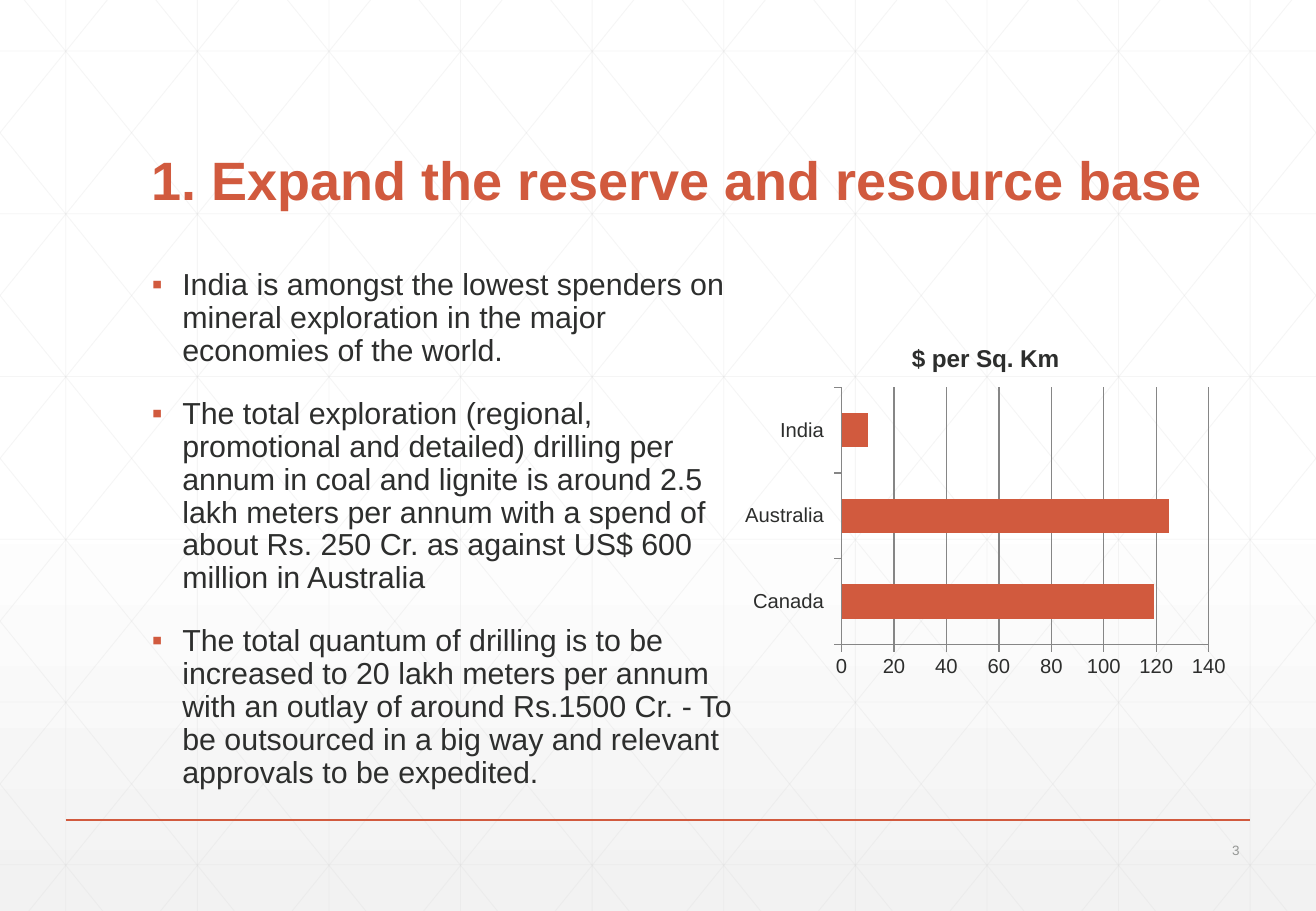
from lxml import etree
from pptx import Presentation
from pptx.chart.data import CategoryChartData
from pptx.dml.color import RGBColor
from pptx.enum.chart import XL_CHART_TYPE as ChartType, XL_TICK_MARK as TickMark
from pptx.enum.shapes import MSO_CONNECTOR as Connector
from pptx.enum.text import MSO_ANCHOR as Anchor, MSO_AUTO_SIZE as AutoSize, PP_ALIGN as Align
from pptx.oxml.ns import qn
from pptx.util import Pt

PX = 9144  # one hundredth of an inch
WIDTH, HEIGHT = 1083, 750
FONT = "Arial"
ACCENT, INK, MUTED = "D15A3E", "2D2E2D", "959795"
LATTICE, AXIS, PAPER, SHADE = "D9D9D9", "868686", "FFFFFF", "F2F2F2"

HEADING = "1. Expand the reserve and resource base"
POINTS = [
    "India is amongst the lowest spenders on mineral exploration in the major "
    "economies of the world.",
    "The total exploration (regional, promotional and detailed) drilling per annum "
    "in coal and lignite is around 2.5 lakh meters per annum with a spend of about "
    "Rs. 250 Cr. as against US$ 600 million in Australia",
    "The total quantum of drilling is to be increased to 20 lakh meters per annum "
    "with an outlay of around Rs.1500 Cr. - To be outsourced in a big way and "
    "relevant approvals to be expedited.",
]
SPENDING = {"Canada ": 119, "Australia ": 125, "India ": 10}


def px(length):
    return round(length * PX)


def colour(code):
    return RGBColor.from_string(code)


def place(shape, box):
    shape.left, shape.top, shape.width, shape.height = map(px, box)


def style_font(font, size, code, bold=False):
    font.name, font.size, font.bold = FONT, Pt(size), bold
    font.color.rgb = colour(code)


def add_bullet(paragraph, indent, mark="▪"):
    props = paragraph._p.get_or_add_pPr()
    props.set("marL", str(px(indent)))
    props.set("indent", str(px(-indent)))
    bullet_colour = etree.SubElement(props, qn("a:buClr"))
    etree.SubElement(bullet_colour, qn("a:srgbClr"), val=ACCENT)
    etree.SubElement(props, qn("a:buFont"), typeface=FONT)
    etree.SubElement(props, qn("a:buChar"), char=mark)


def write(shape, texts, size, code, bold=False, align=Align.LEFT, anchor=Anchor.TOP,
          spacing=1.0, before=0, indent=0):
    frame = shape.text_frame
    frame.text = "\n".join(texts)
    frame.word_wrap, frame.auto_size = True, AutoSize.NONE
    frame.vertical_anchor = anchor
    for paragraph in frame.paragraphs:
        paragraph.alignment, paragraph.line_spacing = align, spacing
        paragraph.space_before, paragraph.space_after = Pt(before), Pt(0)
        if indent:
            add_bullet(paragraph, indent)
        style_font(paragraph.runs[0].font, size, code, bold)


def draw_line(shapes, start, end, code, weight, opacity=100):
    line = shapes.add_connector(Connector.STRAIGHT, *map(px, (*start, *end)))
    line.line.color.rgb, line.line.width = colour(code), Pt(weight)
    properties = line.element.spPr
    if opacity < 100:
        shade = next(properties.iter(qn("a:srgbClr")))
        etree.SubElement(shade, qn("a:alpha"), val=str(opacity * 1000))
    etree.SubElement(properties, qn("a:effectLst"))


def add_backdrop(slide, width, height):
    fill = slide.background.fill
    fill.gradient()
    fill.gradient_angle = 270
    for stop, position, code in zip(fill.gradient_stops, (0.53, 1), (PAPER, SHADE)):
        stop.position, stop.color.rgb = position, colour(code)

    # Lattice: uprights, levels and two mirrored sets of diagonals
    step, lean = width / 10, 606
    segments = [((x, 0), (x, height)) for x in (step * (i + 0.5) for i in range(10))]
    segments += [((0, y), (width, y)) for y in range(42, height, 134)]
    for i in range(-5, 10):
        top = 20 + step * i
        first, last = max(0, top), min(width, top + lean)
        rise = [(x - top) * height / lean for x in (first, last)]
        segments.append(((first, rise[0]), (last, rise[1])))
        segments.append(((width - first, rise[0]), (width - last, rise[1])))
    lattice = slide.shapes.add_group_shape()
    for start, end in segments:
        draw_line(lattice.shapes, start, end, LATTICE, 0.5, opacity=25)


def add_placeholder_text(placeholder, box, texts, **style):
    place(placeholder, box)
    write(placeholder, texts, **style)
    # Bring the text in front of the backdrop
    placeholder.element.getparent().append(placeholder.element)


def add_spending_chart(slide, box):
    data = CategoryChartData()
    data.categories = list(SPENDING)
    data.add_series("$ per Sq. Km", SPENDING.values())
    chart = slide.shapes.add_chart(ChartType.BAR_CLUSTERED, *map(px, box), data).chart
    style_font(chart.font, 12, INK)
    chart.has_legend = False
    chart.has_title = True
    title = chart.chart_title.text_frame
    title.text = "$ per Sq. Km"
    style_font(title.paragraphs[0].runs[0].font, 14.4, INK, bold=True)

    plot = chart.plots[0]
    plot.gap_width, plot.vary_by_categories = 150, False
    bars = plot.series[0].format.fill
    bars.solid()
    bars.fore_color.rgb = colour(ACCENT)

    scale = chart.value_axis
    scale.minimum_scale, scale.maximum_scale, scale.major_unit = 0, 140, 20
    scale.has_major_gridlines = True
    chart.category_axis.has_major_gridlines = False
    for axis in (chart.category_axis, scale):
        axis.major_tick_mark, axis.minor_tick_mark = TickMark.OUTSIDE, TickMark.NONE
    for part in (chart.category_axis, scale, scale.major_gridlines):
        part.format.line.color.rgb = colour(AXIS)
        part.format.line.width = Pt(0.75)


def add_footer(slide, box):
    left, top, width, height = box
    draw_line(slide.shapes, (left, top), (left + width, top), ACCENT, 1)
    number_box = (left + width - 81, top + 13, 82, height - 13)
    number = slide.shapes.add_textbox(*map(px, number_box))
    write(number, ["3"], size=8, code=MUTED, align=Align.RIGHT, anchor=Anchor.MIDDLE)


def main():
    deck = Presentation()
    deck.slide_width, deck.slide_height = px(WIDTH), px(HEIGHT)
    slide = deck.slides.add_slide(deck.slide_layouts[1])
    add_backdrop(slide, WIDTH, HEIGHT)
    add_placeholder_text(slide.shapes.title, (115, 55, 899, 125), [HEADING], size=32,
                         code=ACCENT, bold=True, anchor=Anchor.BOTTOM, spacing=0.9)
    add_placeholder_text(slide.placeholders[1], (115, 217, 499, 417), POINTS, size=18,
                         code=INK, spacing=0.9, before=18, indent=25)
    add_spending_chart(slide, (605, 268, 412, 296))
    add_footer(slide, (54, 675, 975, 37))
    deck.save("out.pptx")


if __name__ == "__main__":
    main()
